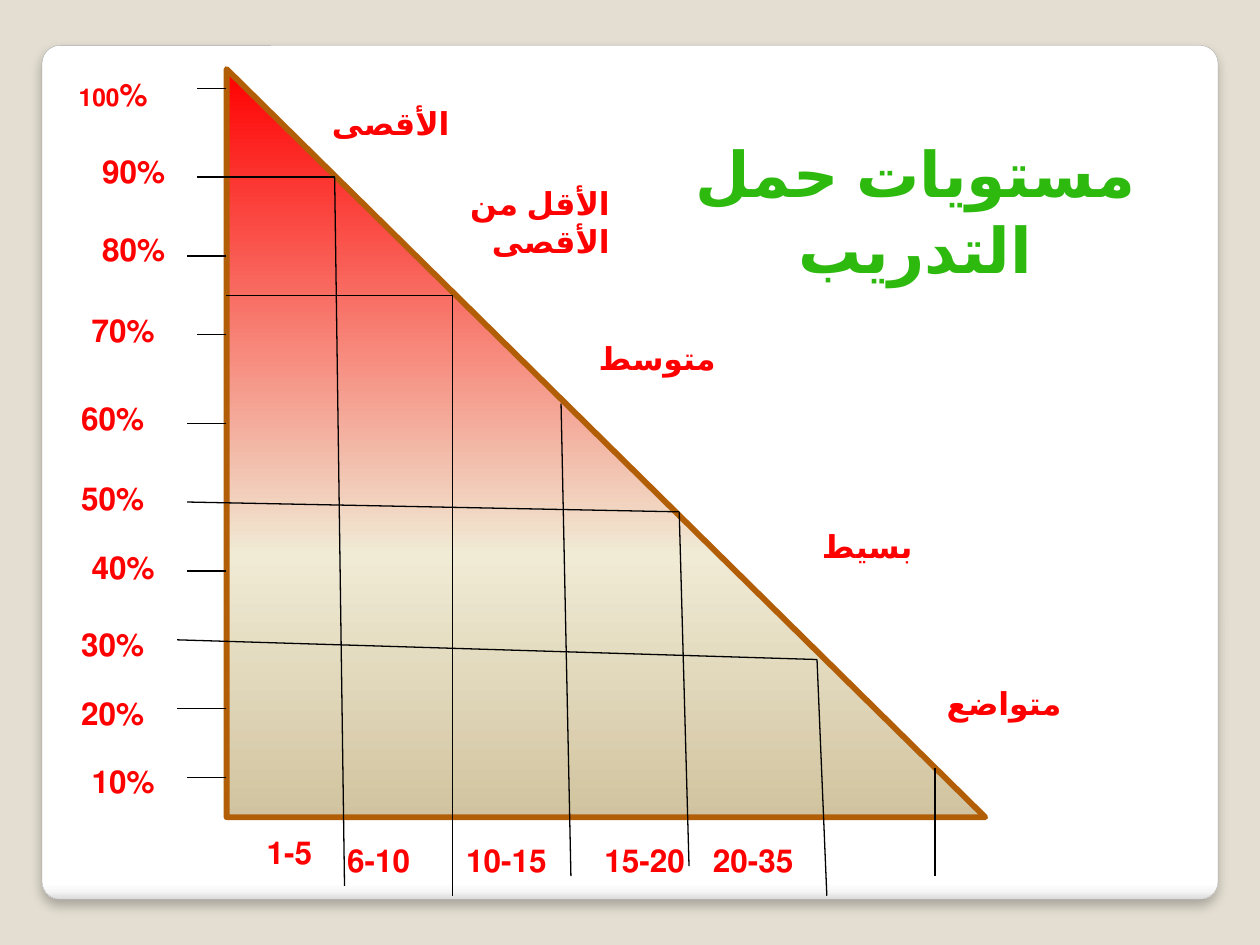
from lxml import etree
from pptx import Presentation
from pptx.dml.color import RGBColor
from pptx.enum.lang import MSO_LANGUAGE_ID
from pptx.enum.shapes import MSO_CONNECTOR, MSO_SHAPE
from pptx.enum.text import MSO_AUTO_SIZE, PP_ALIGN
from pptx.oxml import parse_xml
from pptx.oxml.ns import nsdecls, qn
from pptx.util import Pt

STRAIGHT = MSO_CONNECTOR.STRAIGHT
ROUNDED, TRIANGLE = MSO_SHAPE.ROUNDED_RECTANGLE, MSO_SHAPE.RIGHT_TRIANGLE
GROW = MSO_AUTO_SIZE.SHAPE_TO_FIT_TEXT
RIGHT, CENTER = PP_ALIGN.RIGHT, PP_ALIGN.CENTER
ARABIC = MSO_LANGUAGE_ID.ARABIC

THEME = {
    "font": "Arial", "label": 18, "small": 14, "title": 36,
    "background": "E3DED1", "red": "FF0000", "green": "2DB90E",
    "line": "000000", "panel_edge": "A4A4A4", "triangle_edge": "B25E07",
    "panel": [(0, "FFFFFF"), (98, "FFFFFF"), (99, "F7F7F7"), (100, "DADADA")],
    "triangle": [(0, "FF0000"), (65, "F0EBD5"), (100, "D1C39F")],
}
WIDTH, HEIGHT = 720, 540
GRID = WIDTH / 128  # all lines end on this grid
AXIS = 23           # grid column of the vertical axis
LABEL_HEIGHT = 29

# Ticks on the axis: (outer column, row)
TICKS = [(20, 9), (19, 26), (20, 34), (19, 43), (19, 58), (18, 72), (19, 79)]
# Level lines and drops to the base: (column, row, column, row)
LEVELS = [(34, 18, 20, 18), (23, 30, 46, 30), (69, 52, 19, 51), (83, 67, 18, 65)]
DROPS = [(34, 18, 35, 90), (46, 30, 46, 91), (57, 41, 58, 89),
         (69, 52, 70, 88), (83, 67, 84, 91), (95, 78, 95, 89)]

# Labels: (text, right edge, top, width)
PERCENTS = [("100%", 91.5, 39.5, 54), ("90%", 101.5, 83.5, 51),
            ("80%", 101.5, 128, 51), ("70%", 95.5, 174, 51),
            ("60%", 89.5, 224.5, 51), ("50%", 89.5, 270, 51),
            ("40%", 95.5, 309.5, 51), ("30%", 89.5, 353.5, 51),
            ("20%", 89.5, 393, 51), ("10%", 95.5, 432, 51)]
REPEATS = [("1-5", 185.5, 472.5, 43), ("6-10", 241.5, 477, 51),
           ("10-15", 319.5, 477, 61), ("15-20", 398.5, 477, 61),
           ("20-35", 460.5, 477, 61)]
LOADS = [("الأقصى", 264, 56, 112), ("الأقل من الأقصى", 355.5, 101.5, 112),
         ("متوسط", 416, 190, 112), ("بسيط", 528.5, 297.5, 112),
         ("متواضع", 613.5, 387.5, 96)]
TITLE = ("مستويات حمل التدريب", 658, 73.5, 270)


def color(name):
    return RGBColor.from_string(THEME[name])


def add_panel(page, kind, box, stops, edge, weight):
    """Preset shape with a vertical gradient of any number of stops."""
    shape = page.shapes.add_shape(kind, *(Pt(v) for v in box))
    shape.shadow.inherit = False
    shape.line.color.rgb = color(edge)
    shape.line.width = Pt(weight)
    shape.fill.gradient()
    shape.fill.gradient_angle = 270
    stop_list = shape._element.spPr.find(qn("a:gradFill")).find(qn("a:gsLst"))
    for old in list(stop_list):
        stop_list.remove(old)
    for position, rgb in THEME[stops]:
        stop = etree.SubElement(stop_list, qn("a:gs"), pos=str(position * 1000))
        etree.SubElement(stop, qn("a:srgbClr"), val=rgb)
    return shape


def add_line(page, x1, y1, x2, y2):
    line = page.shapes.add_connector(
        STRAIGHT, *(Pt(v * GRID) for v in (x1, y1, x2, y2)))
    line.line.color.rgb = color("line")
    line.line.width = Pt(0.75)
    etree.SubElement(line._element.spPr, qn("a:effectLst"))


def add_label(page, text, right, top, width, wrap=False, height=LABEL_HEIGHT,
              size="label", tint="red", align=RIGHT):
    """Right-to-left text placed by its right edge."""
    box = page.shapes.add_textbox(Pt(right - width), Pt(top), Pt(width), Pt(height))
    frame = box.text_frame
    frame.word_wrap = wrap
    frame.auto_size = GROW
    frame.text = text
    para = frame.paragraphs[0]
    para.alignment = align
    para._p.get_or_add_pPr().set("rtl", "1")
    if text == "100%":  # the number is smaller than its sign
        para.runs[0].text = "100"
        para.add_run().text = "%"
    for span in para.runs:
        span.font.name = THEME["font"]
        span.font.bold = True
        span.font.size = Pt(THEME["small" if span.text == "100" else size])
        span.font.color.rgb = color(tint)
        span.font.language_id = ARABIC


deck = Presentation()
deck.slide_width, deck.slide_height = Pt(WIDTH), Pt(HEIGHT)
page = deck.slides.add_slide(deck.slide_layouts[6])
page.background.fill.solid()
page.background.fill.fore_color.rgb = color("background")

# White panel with a soft shadow
panel = add_panel(page, ROUNDED, (24, 26, 672, 488), "panel", "panel_edge", 0.16)
panel.adjustments[0] = 0.021
panel._element.spPr.find(qn("a:effectLst")).append(parse_xml(
    f'<a:outerShdw {nsdecls("a")} blurRad="{Pt(6)}" dist="{Pt(4)}" dir="5400000">'
    '<a:srgbClr val="000000"><a:alpha val="25000"/></a:srgbClr></a:outerShdw>'))

# Load triangle
add_panel(page, TRIANGLE, (129.5, 39.5, 433.5, 427.5),
          "triangle", "triangle_edge", 3.35)

# Axis ticks, level lines and drops
for outer, row in TICKS:
    add_line(page, AXIS, row, outer, row)
for ends in LEVELS + DROPS:
    add_line(page, *ends)

# Labels and title
for label in PERCENTS + REPEATS:
    add_label(page, *label)
for label in LOADS:
    add_label(page, *label, wrap=True)
add_label(page, *TITLE, wrap=True, height=94.5, size="title", tint="green",
          align=CENTER)

deck.save("out.pptx")
